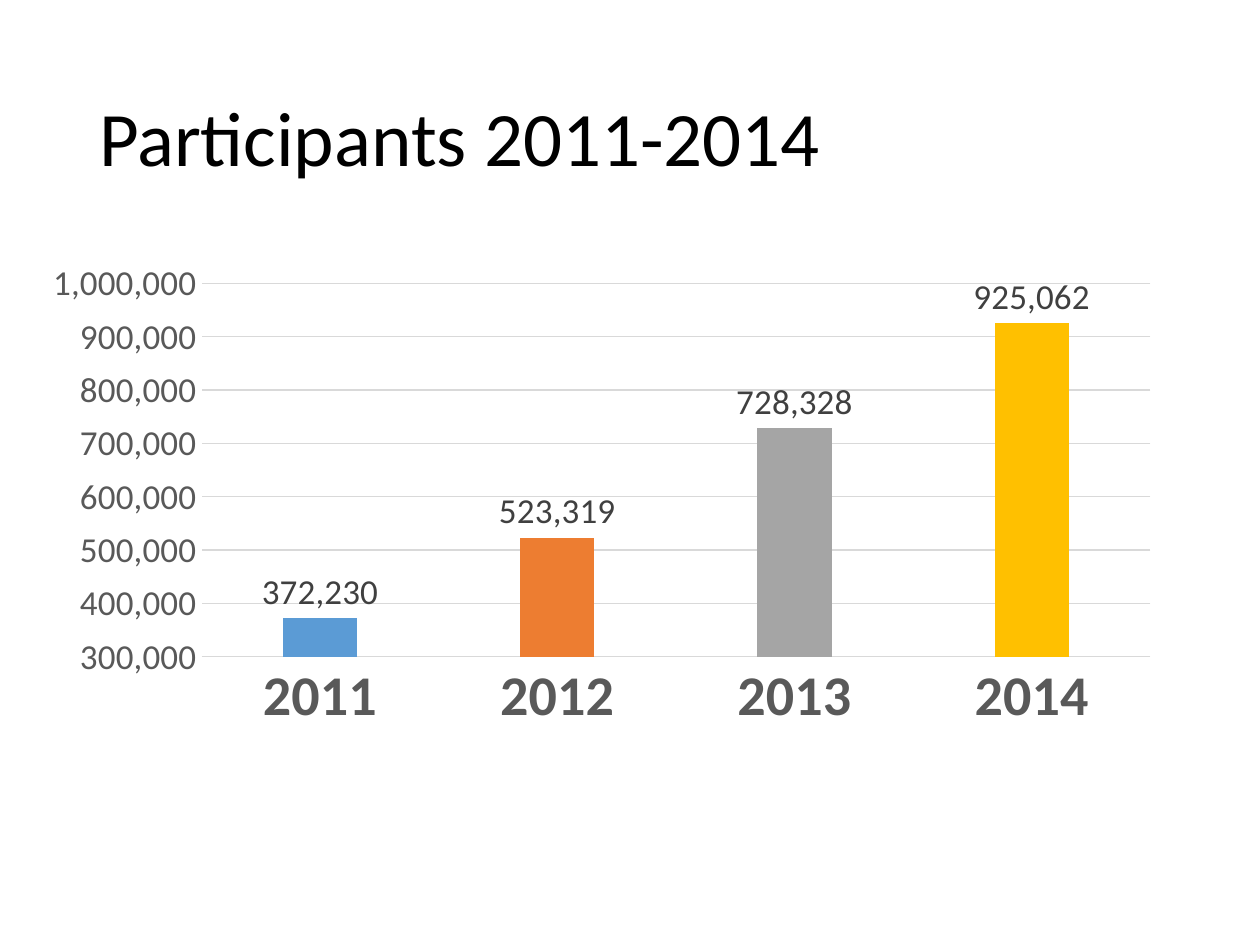
from pptx import Presentation
from pptx.chart.data import CategoryChartData
from pptx.dml.color import RGBColor
from pptx.enum.chart import XL_CHART_TYPE, XL_LABEL_POSITION, XL_TICK_MARK
from pptx.enum.text import MSO_ANCHOR
from pptx.util import Cm, Pt

FONT = "Calibri"
COLORS = {
    "title": "000000",
    "axis": "595959",
    "label": "404040",
    "grid": "D9D9D9",
    "2011": "5B9BD5",
    "2012": "ED7D31",
    "2013": "A5A5A5",
    "2014": "FFC000",
}
PARTICIPANTS = {"2011": 372230, "2012": 523319, "2013": 728328, "2014": 925062}


def rgb(name):
    return RGBColor.from_string(COLORS[name])


def set_attrs(obj, values):
    for name, value in values.items():
        setattr(obj, name, value)


def format_font(font, size, color, bold=False):
    set_attrs(font, {"name": FONT, "size": Pt(size), "bold": bold})
    font.color.rgb = rgb(color)


def format_line(line):
    line.color.rgb = rgb("grid")
    line.width = Pt(0.75)


def add_title(s, text):
    tf = s.shapes.add_textbox(Cm(1.75), Cm(1.02), Cm(21.9), Cm(3.68)).text_frame
    set_attrs(tf, {"word_wrap": True, "vertical_anchor": MSO_ANCHOR.MIDDLE})
    p = tf.paragraphs[0]
    p.line_spacing = 0.9
    r = p.add_run()
    r.text = text
    format_font(r.font, 44, "title")


def format_axes(chart):
    cat, val = chart.category_axis, chart.value_axis
    for axis in (cat, val):
        set_attrs(axis, {"major_tick_mark": XL_TICK_MARK.NONE,
                         "minor_tick_mark": XL_TICK_MARK.NONE})
    format_font(cat.tick_labels.font, 32, "axis", bold=True)
    format_line(cat.format.line)

    set_attrs(val, {"minimum_scale": 300000, "has_major_gridlines": True})
    set_attrs(val.tick_labels, {"number_format": "#,##0",
                                "number_format_is_linked": False})
    format_font(val.tick_labels.font, 20, "axis")
    val.format.line.fill.background()
    format_line(val.major_gridlines.format.line)


def format_columns(plot):
    set_attrs(plot, {"gap_width": 219, "overlap": -27,
                     "vary_by_categories": False, "has_data_labels": True})
    labels = plot.data_labels
    set_attrs(labels, {"show_value": True, "number_format": "#,##0",
                       "number_format_is_linked": False,
                       "position": XL_LABEL_POSITION.OUTSIDE_END})
    format_font(labels.font, 20, "label")
    for i, year in enumerate(PARTICIPANTS):
        fill = plot.series[0].points[i].format.fill
        fill.solid()
        fill.fore_color.rgb = rgb(year)


def add_participants_chart(s):
    data = CategoryChartData(number_format="#,##0")
    data.categories = list(PARTICIPANTS)
    data.add_series("Series 1", list(PARTICIPANTS.values()))
    chart = s.shapes.add_chart(XL_CHART_TYPE.COLUMN_CLUSTERED, Cm(0.61), Cm(5.08),
                               Cm(23.04), Cm(9.86), data).chart
    set_attrs(chart, {"has_legend": False, "has_title": False})
    format_font(chart.font, 10, "title")
    format_axes(chart)
    format_columns(chart.plots[0])


def main():
    prs = Presentation()
    set_attrs(prs, {"slide_width": Cm(25.4), "slide_height": Cm(19.05)})
    s = prs.slides.add_slide(prs.slide_layouts[6])
    add_title(s, "Participants 2011-2014")
    add_participants_chart(s)
    prs.save("out.pptx")


if __name__ == "__main__":
    main()
